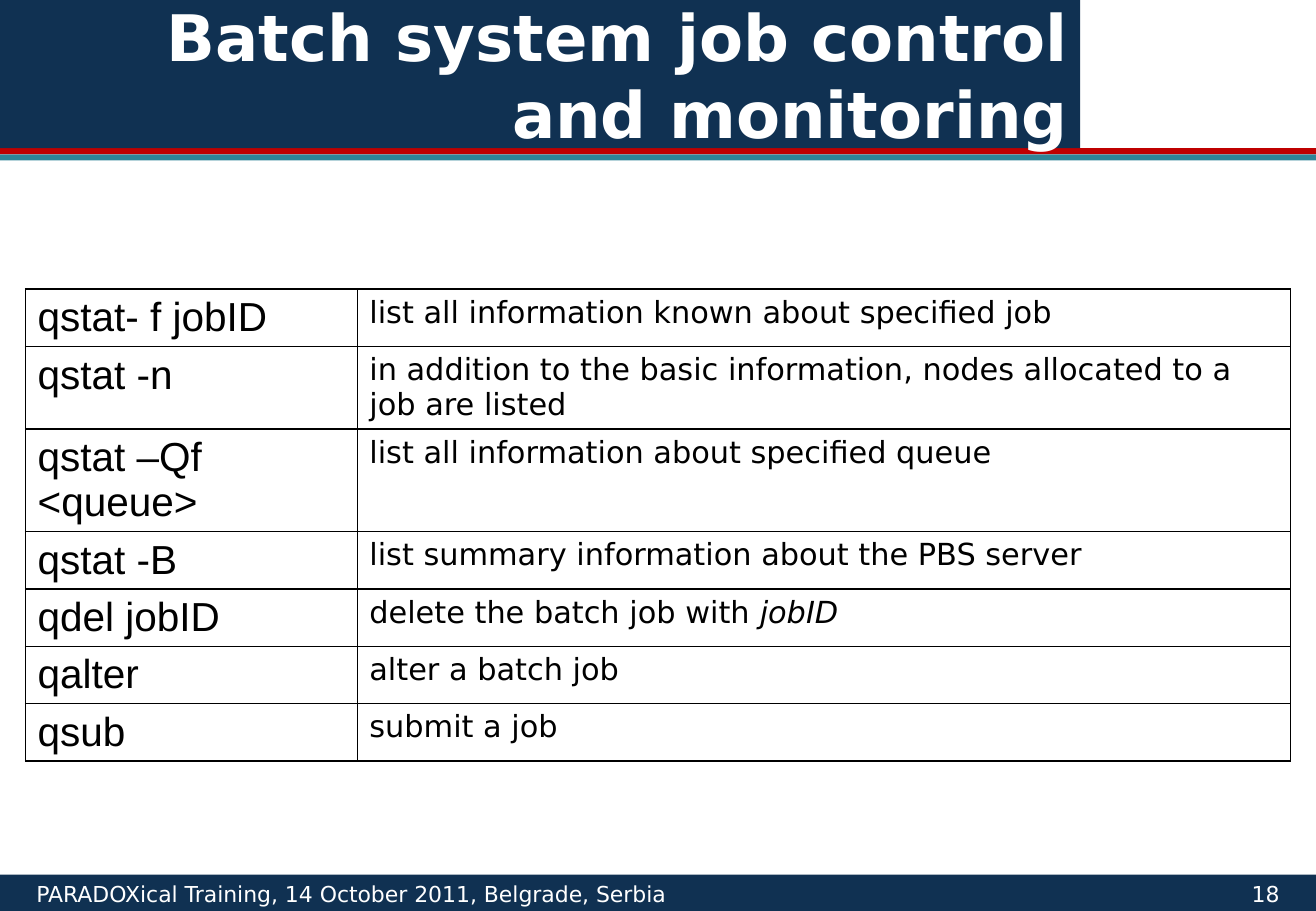
from dataclasses import dataclass

from lxml.etree import SubElement
from pptx import Presentation
from pptx.dml.color import RGBColor
from pptx.enum.shapes import MSO_SHAPE as Preset
from pptx.enum.text import MSO_ANCHOR as Anchor, PP_ALIGN as Align
from pptx.oxml.ns import qn
from pptx.util import Inches, Pt

# Grid: one column or row is a hundredth of an inch
COLUMNS, ROWS = 1083, 750
UNIT = Inches(0.01)


@dataclass(frozen=True)
class Theme:
    navy: RGBColor = RGBColor(0x10, 0x31, 0x52)
    red: RGBColor = RGBColor(0xBF, 0x00, 0x00)
    teal: RGBColor = RGBColor(0x2E, 0x84, 0x97)
    white: RGBColor = RGBColor(0xFF, 0xFF, 0xFF)
    black: RGBColor = RGBColor(0x00, 0x00, 0x00)
    body_font: str = "DejaVu Sans"
    command_font: str = "Arial"
    title_size: int = 38
    command_size: int = 24
    body_size: int = 18
    footer_size: int = 13
    border_width: int = 1


THEME = Theme()


@dataclass(frozen=True)
class Bar:
    top: int
    width: int
    height: int
    color: RGBColor


@dataclass(frozen=True)
class Command:
    name: str
    meaning: str
    height: int = 47
    argument: str = ""


TEAL_RULE = Bar(127, COLUMNS, 5, THEME.teal)
RED_RULE = Bar(122, COLUMNS, 5, THEME.red)
TITLE_BAR = Bar(0, 889, 122, THEME.navy)
FOOTER_BAR = Bar(720, COLUMNS, ROWS - 720, THEME.navy)

TABLE_LEFT, TABLE_TOP = 21, 238
TABLE_COLUMNS = (273, 768)
FOOTER_INDENT = 30

COMMANDS = (
    Command("qstat- f jobID", "list all information known about specified job"),
    Command("qstat -n", "in addition to the basic information, nodes allocated "
            "to a job are listed", 68),
    Command("qstat –Qf <queue>", "list all information about specified queue", 84),
    Command("qstat -B", "list summary information about the PBS server"),
    Command("qdel jobID", "delete the batch job with ", argument="jobID"),
    Command("qalter", "alter a batch job"),
    Command("qsub", "submit a job"),
)


def style(paragraph, name: str, size: int, color: RGBColor, align=Align.LEFT) -> None:
    paragraph.alignment = align
    paragraph.font.name = name
    paragraph.font.size = Pt(size)
    paragraph.font.color.rgb = color


def draw_bar(slide, bar: Bar):
    shape = slide.shapes.add_shape(
        Preset.RECTANGLE, 0, bar.top * UNIT, bar.width * UNIT, bar.height * UNIT)
    shape.shadow.inherit = False
    shape.fill.solid()
    shape.fill.fore_color.rgb = bar.color
    shape.line.fill.background()
    shape.text_frame.word_wrap = True
    return shape


def draw_title(slide, text: str) -> None:
    frame = draw_bar(slide, TITLE_BAR).text_frame
    frame.vertical_anchor = Anchor.MIDDLE
    paragraph = frame.paragraphs[0]
    paragraph.text = text
    style(paragraph, THEME.body_font, THEME.title_size, THEME.white, Align.RIGHT)
    paragraph.font.bold = True


def draw_footer(slide, text: str, number: int) -> None:
    frame = draw_bar(slide, FOOTER_BAR).text_frame
    frame.vertical_anchor = Anchor.TOP
    frame.margin_left = FOOTER_INDENT * UNIT
    paragraph = frame.paragraphs[0]
    paragraph.text = f"{text}\t{number}"
    # The page number hangs on a right tab, as far in as the text
    tabs = SubElement(paragraph._p.get_or_add_pPr(), qn("a:tabLst"))
    position = (COLUMNS - 2 * FOOTER_INDENT) * UNIT
    SubElement(tabs, qn("a:tab"), pos=str(position), algn="r")
    style(paragraph, THEME.body_font, THEME.footer_size, THEME.white)


def format_cell(cell) -> None:
    properties = cell._tc.get_or_add_tcPr()
    for side in ("a:lnL", "a:lnR", "a:lnT", "a:lnB"):
        line = SubElement(properties, qn(side), w=str(Pt(THEME.border_width)))
        fill = SubElement(line, qn("a:solidFill"))
        SubElement(fill, qn("a:srgbClr"), val=str(THEME.black))
    cell.fill.solid()
    cell.fill.fore_color.rgb = THEME.white
    cell.vertical_anchor = Anchor.TOP


def draw_commands(slide, commands: tuple[Command, ...]) -> None:
    table = slide.shapes.add_table(
        len(commands), len(TABLE_COLUMNS), TABLE_LEFT * UNIT, TABLE_TOP * UNIT,
        sum(TABLE_COLUMNS) * UNIT,
        sum(command.height for command in commands) * UNIT).table
    table.first_row = table.horz_banding = False
    for column, width in zip(table.columns, TABLE_COLUMNS):
        column.width = width * UNIT
    for row, command in zip(table.rows, commands):
        row.height = command.height * UNIT
        for cell in row.cells:
            format_cell(cell)
        name, meaning = (cell.text_frame.paragraphs[0] for cell in row.cells)
        name.text = command.name
        style(name, THEME.command_font, THEME.command_size, THEME.black)
        meaning.text = command.meaning
        if command.argument:
            run = meaning.add_run()
            run.text = command.argument
            run.font.italic = True
        style(meaning, THEME.body_font, THEME.body_size, THEME.black)


def main() -> None:
    presentation = Presentation()
    presentation.slide_width = COLUMNS * UNIT
    presentation.slide_height = ROWS * UNIT
    slide = presentation.slides.add_slide(presentation.slide_layouts[6])

    # Header
    for rule in (TEAL_RULE, RED_RULE):
        draw_bar(slide, rule)
    draw_title(slide, "Batch system job control and monitoring")

    # Command table
    draw_commands(slide, COMMANDS)

    # Footer
    draw_footer(slide, "PARADOXical Training, 14 October 2011, Belgrade, Serbia", 18)

    presentation.save("out.pptx")


if __name__ == "__main__":
    main()
